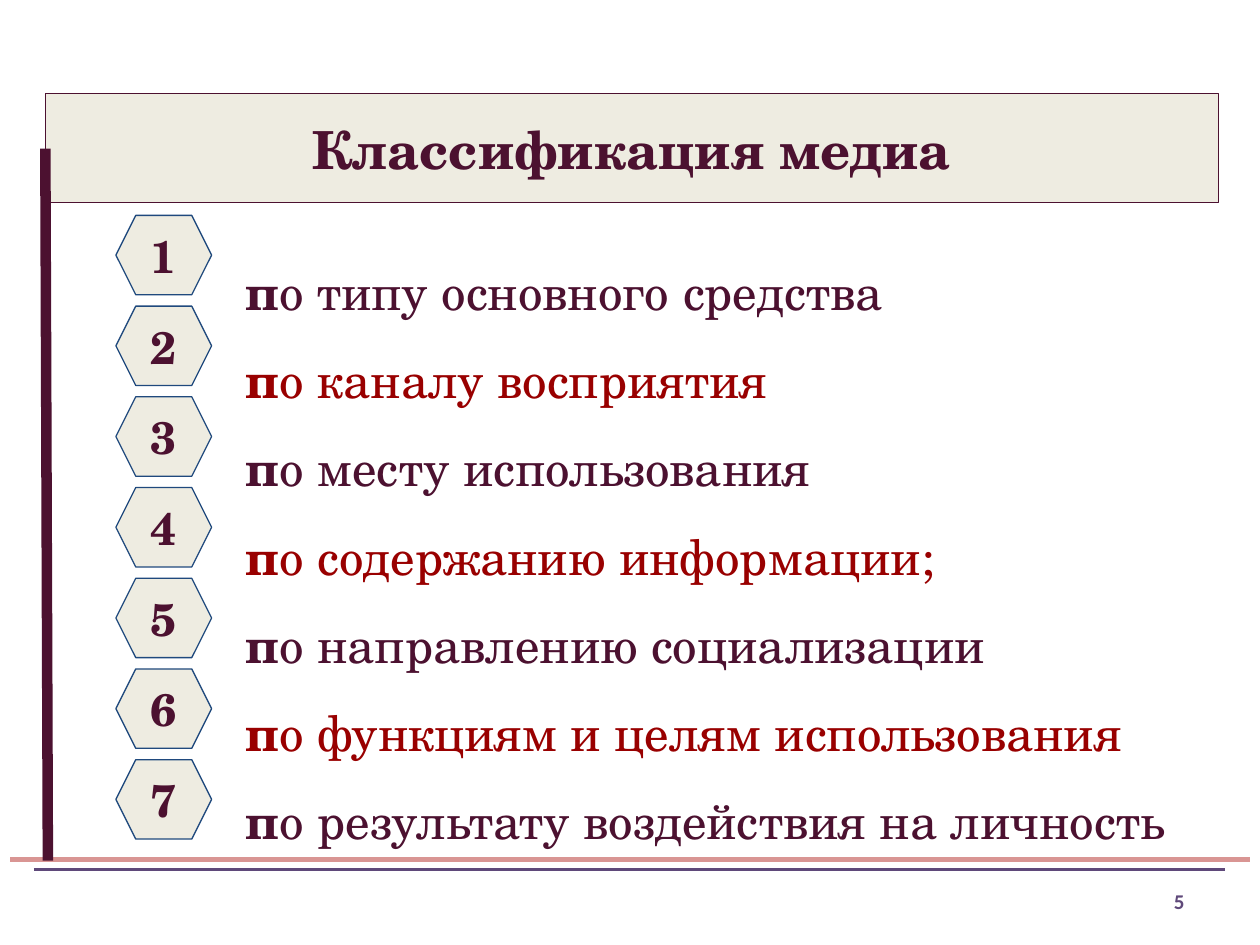
"""Build the slide on the classification of media: a title and seven numbered criteria."""
from dataclasses import dataclass

from lxml import etree
from pptx import Presentation
from pptx.dml.color import RGBColor
from pptx.enum.shapes import MSO_CONNECTOR, MSO_SHAPE
from pptx.enum.text import MSO_ANCHOR, MSO_AUTO_SIZE, PP_ALIGN
from pptx.oxml.ns import qn
from pptx.shapes.autoshape import Shape
from pptx.slide import Slide
from pptx.util import Inches, Pt

HEXAGON = MSO_SHAPE.HEXAGON
STRAIGHT = MSO_CONNECTOR.STRAIGHT
MIDDLE, TOP = MSO_ANCHOR.MIDDLE, MSO_ANCHOR.TOP
CENTER, RIGHT, JUSTIFY = PP_ALIGN.CENTER, PP_ALIGN.RIGHT, PP_ALIGN.JUSTIFY
NO_FIT = MSO_AUTO_SIZE.NONE


@dataclass(frozen=True)
class Theme:
    """Colours, fonts and type sizes of the slide."""
    plum: str = "4C1130"
    red: str = "990000"
    cream: str = "EEECE1"
    navy: str = "1F497D"
    rose: str = "D99593"
    violet: str = "5F497A"
    serif: str = "TeX Gyre Schola"
    sans: str = "Calibri"
    title_size: int = 30
    list_size: int = 28
    badge_size: int = 26
    number_size: int = 12


@dataclass(frozen=True)
class Area:
    """A rectangle in inches."""
    left: float
    top: float
    width: float
    height: float

    def lengths(self) -> tuple:
        """Return the four sides as slide lengths."""
        return tuple(map(Inches, (self.left, self.top, self.width, self.height)))


@dataclass(frozen=True)
class Rule:
    """A straight line between two points in inches."""
    start: tuple
    end: tuple
    color: str
    weight: float


THEME = Theme()
TITLE_AREA = Area(0.36, 0.74, 9.31, 0.87)
LIST_AREA = Area(1.85, 1.74, 7.82, 4.92)
NUMBER_AREA = Area(8.86, 6.95, 0.64, 0.4)
FIRST_BADGE = Area(0.92, 1.71, 0.76, 0.63)
BADGE_PITCH = 0.72
FOOTER_RULES = (
    Rule((0.08, 6.82), (9.92, 6.82), THEME.rose, 3),
    Rule((0.27, 6.9), (9.72, 6.9), THEME.violet, 2),
)
SIDE_RULE = Rule((0.36, 1.18), (0.38, 6.83), THEME.plum, 6)
CRITERIA = (
    "по типу основного средства",
    "по каналу восприятия",
    "по месту использования",
    "по содержанию информации;",
    "по направлению социализации",
    "по функциям и целям использования",
    "по результату воздействия на личность",
)


def style_font(font, size: int, color: str, name: str = THEME.serif, bold: bool = True) -> None:
    """Set the face, size, colour and weight of a font."""
    font.name, font.size, font.bold = name, Pt(size), bold
    font.color.rgb = RGBColor.from_string(color)


def place(box: Shape, area: Area) -> None:
    """Move and size a shape."""
    box.left, box.top, box.width, box.height = area.lengths()


def set_frame(box: Shape, anchor: MSO_ANCHOR, vertical_inset: float) -> None:
    """Set wrapping, anchoring and insets of a text frame."""
    frame = box.text_frame
    frame.word_wrap, frame.auto_size, frame.vertical_anchor = True, NO_FIT, anchor
    frame.margin_left = frame.margin_right = Inches(0.1)
    frame.margin_top = frame.margin_bottom = Inches(vertical_inset)


def write_line(box: Shape, text: str, align: PP_ALIGN, size: int, color: str,
               name: str = THEME.serif) -> None:
    """Fill a box with one bold line of text."""
    box.text_frame.text = text
    paragraph = box.text_frame.paragraphs[0]
    paragraph.alignment = align
    style_font(paragraph.runs[0].font, size, color, name)


def paint(box: Shape, line_color: str) -> None:
    """Give a shape the cream fill and a thin outline."""
    box.fill.solid()
    box.fill.fore_color.rgb = RGBColor.from_string(THEME.cream)
    box.line.color.rgb = RGBColor.from_string(line_color)
    box.line.width = Pt(0.75)


def draw_rule(page: Slide, rule: Rule) -> None:
    """Draw a line without a shadow."""
    connector = page.shapes.add_connector(STRAIGHT, *map(Inches, rule.start + rule.end))
    connector.line.color.rgb = RGBColor.from_string(rule.color)
    connector.line.width = Pt(rule.weight)
    etree.SubElement(connector._element.spPr, qn("a:effectLst"))


def draw_badge(page: Slide, row: int) -> None:
    """Draw the numbered hexagon of a row."""
    first = FIRST_BADGE
    area = Area(first.left, first.top + row * BADGE_PITCH, first.width, first.height)
    badge = page.shapes.add_shape(HEXAGON, *area.lengths())
    badge.shadow.inherit = False
    badge.adjustments[0] = 0.25
    paint(badge, THEME.navy)
    set_frame(badge, MIDDLE, 0.1)
    write_line(badge, str(row + 1), CENTER, THEME.badge_size, THEME.plum)


def fill_title(title: Shape) -> None:
    """Write and frame the title."""
    place(title, TITLE_AREA)
    paint(title, THEME.plum)
    set_frame(title, MIDDLE, 0.05)
    write_line(title, "Классификация медиа", CENTER, THEME.title_size, THEME.plum)


def fill_list(body: Shape) -> None:
    """Write the criteria in alternating colours with bold initials."""
    place(body, LIST_AREA)
    set_frame(body, TOP, 0.1)
    frame = body.text_frame
    for row, criterion in enumerate(CRITERIA):
        paragraph = frame.add_paragraph() if row else frame.paragraphs[0]
        properties = paragraph._p.get_or_add_pPr()
        properties.set("marL", "0")
        properties.set("indent", "0")
        etree.SubElement(properties, qn("a:buNone"))
        paragraph.alignment, paragraph.line_spacing = JUSTIFY, 1.5
        paragraph.space_before = paragraph.space_after = Pt(0)
        color = THEME.red if row % 2 else THEME.plum
        for text, bold in ((criterion[0], True), (criterion[1:], False)):
            span = paragraph.add_run()
            span.text = text
            style_font(span.font, THEME.list_size, color, bold=bold)


def main() -> None:
    """Assemble and save the deck."""
    deck = Presentation()
    deck.slide_width, deck.slide_height = Inches(10), Inches(7.5)
    page = deck.slides.add_slide(deck.slide_layouts[1])
    for rule in FOOTER_RULES:
        draw_rule(page, rule)
    fill_title(page.shapes.title)
    fill_list(page.placeholders[1])
    number = page.shapes.add_textbox(*NUMBER_AREA.lengths())
    set_frame(number, MIDDLE, 0.05)
    write_line(number, "5", RIGHT, THEME.number_size, THEME.violet, THEME.sans)
    for row in range(len(CRITERIA)):
        draw_badge(page, row)
    draw_rule(page, SIDE_RULE)
    deck.save("out.pptx")


if __name__ == "__main__":
    main()
